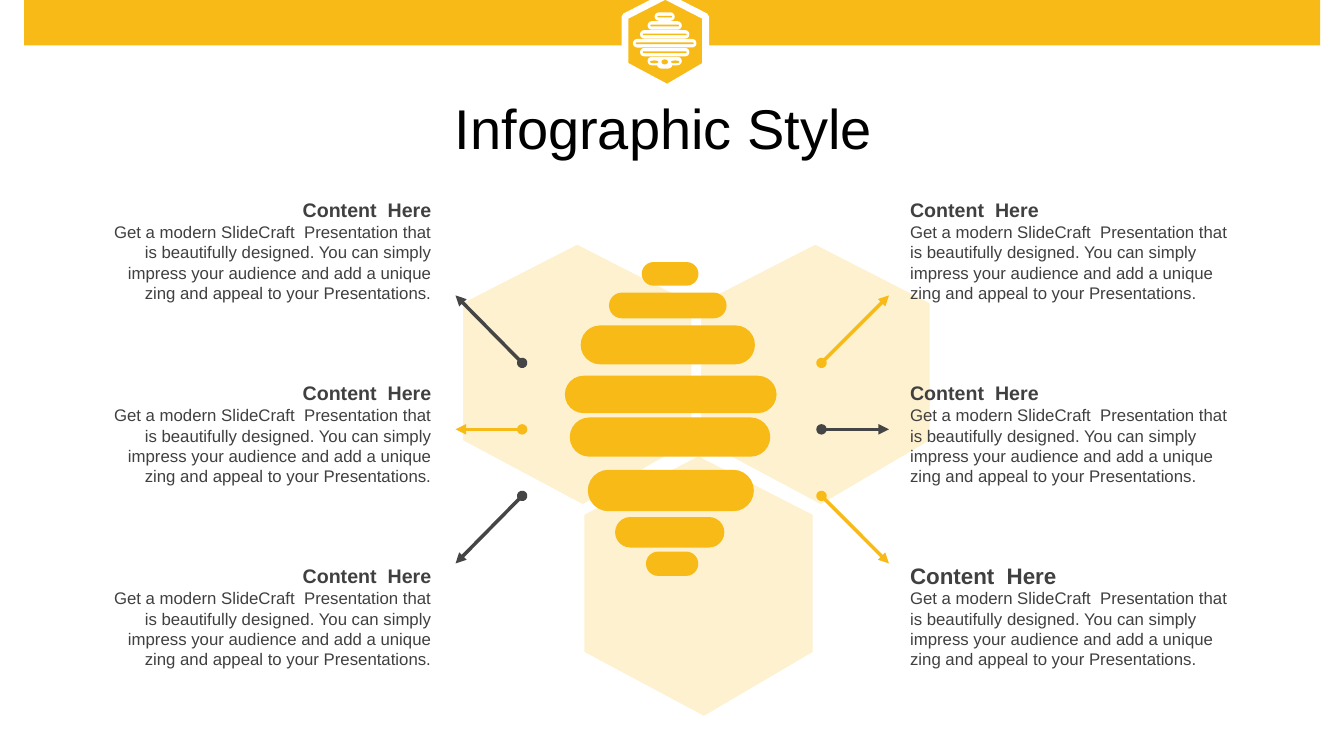
from lxml import etree
from pptx import Presentation
from pptx import util as u
from pptx.dml.color import RGBColor
from pptx.enum import shapes, text
from pptx.oxml.ns import qn

# Content
TITLE = "Infographic Style"
HEADING = "Content  Here"
BODY = ("Get a modern SlideCraft  Presentation that is beautifully designed. "
        "You can simply impress your audience and add a unique zing and "
        "appeal to your Presentations.")

# Heading sizes by row, arrow colours by row
COLUMNS = [
    dict(left=643, align="LEFT", arrow=(586.8, 635),
         sizes=(14, 14, 16), colors=("honey", "dark", "honey")),
    dict(left=71.3, align="RIGHT", arrow=(373, 325.4),
         sizes=(14, 14, 14), colors=("dark", "honey", "dark")),
]
ARROW_ENDS = [(259.2, 211), (306.7, 306.7), (354.2, 402.5)]

# Beehive bands: left, top, width, height
HIVE = [(458.4, 187.2, 40.5, 16.9), (435, 209, 84, 18.4),
        (414.8, 232.4, 124.5, 27.8), (403.5, 268.4, 151.2, 26.7),
        (407, 298.2, 143.2, 28), (419.9, 335.6, 118.6, 29.6),
        (439.4, 369.3, 78, 21.8), (461.4, 394, 37.4, 17.4)]

# Honeycomb cells: left, top
CELLS = [(498.4, 172), (328.3, 172), (414.9, 323.2)]
HEXAGON = [(84, 0), (168, 43), (168, 144), (88, 191), (0, 144), (0, 43)]

# Header emblem: band widths from top to bottom, feet holes
EMBLEM_WIDTHS = [14.4, 24.5, 35.3, 45.4, 35.3, 24.5]
EMBLEM_CENTER, EMBLEM_TOP, EMBLEM_STEP = 474.8, 8.8, 6.35
EMBLEM_HOLES = [(-7.5, 6, 2), (0, 4.6, 3.6), (7.5, 6, 2)]

THEME = dict(
    font="Arial", title=40, body=12,
    honey=RGBColor(0xF8, 0xBA, 0x16), dark=RGBColor(0x45, 0x45, 0x45),
    text=RGBColor(0x40, 0x40, 0x40), black=RGBColor(0, 0, 0),
    white=RGBColor(0xFF, 0xFF, 0xFF),
)

deck = Presentation()
deck.slide_width, deck.slide_height = u.Pt(960), u.Pt(540)
page = deck.slides.add_slide(deck.slide_layouts[6])


def paint(shape, color, outline=None):
    shape.shadow.inherit = False
    shape.fill.solid()
    shape.fill.fore_color.rgb = THEME[color]
    if outline:
        shape.line.color.rgb = THEME[outline]
        shape.line.width = u.Pt(4.88)
    else:
        shape.line.fill.background()
    return shape


def add_block(kind, left, top, width, height, color):
    shape = page.shapes.add_shape(
        kind, u.Pt(left), u.Pt(top), u.Pt(width), u.Pt(height))
    if kind == shapes.MSO_SHAPE.ROUNDED_RECTANGLE:
        shape.adjustments[0] = 0.5
    return paint(shape, color)


def add_hexagon(left, top, scale=1.0, opacity=100):
    builder = page.shapes.build_freeform(*HEXAGON[0], scale=u.Pt(1) * scale)
    builder.add_line_segments(HEXAGON[1:], close=True)
    shape = paint(builder.convert_to_shape(u.Pt(left), u.Pt(top)),
                  "honey", "white")
    if opacity < 100:
        tint = shape.fill._xPr.find(qn("a:solidFill"))[0]
        etree.SubElement(tint, qn("a:alpha"), val=str(opacity * 1000))


def add_text(words, left, top, width, height, size, color="text", bold=False,
             align="LEFT", anchor="TOP", grow=True, leading=None, before=None):
    box = page.shapes.add_textbox(
        u.Pt(left), u.Pt(top), u.Pt(width), u.Pt(height))
    frame = box.text_frame
    frame.word_wrap = True
    frame.vertical_anchor = getattr(text.MSO_ANCHOR, anchor)
    if grow:
        frame.auto_size = text.MSO_AUTO_SIZE.SHAPE_TO_FIT_TEXT
    para = frame.paragraphs[0]
    para.alignment = getattr(text.PP_ALIGN, align)
    if leading:
        para.line_spacing = leading
    if before:
        para.space_before = u.Pt(before)
    span = para.add_run()
    span.text = words
    span.font.name = THEME["font"]
    span.font.size = u.Pt(size)
    span.font.bold = bold
    span.font.color.rgb = THEME[color]


def add_arrow(start, end, color):
    arrow = page.shapes.add_connector(
        shapes.MSO_CONNECTOR.STRAIGHT, *map(u.Pt, start + end))
    arrow.line.color.rgb = THEME[color]
    arrow.line.width = u.Pt(2.5)
    line = arrow.line._get_or_add_ln()
    etree.SubElement(line, qn("a:headEnd"), type="oval")
    etree.SubElement(line, qn("a:tailEnd"), type="triangle")
    etree.SubElement(arrow._element.spPr, qn("a:effectLst"))


ROUND = shapes.MSO_SHAPE.ROUNDED_RECTANGLE
OVAL = shapes.MSO_SHAPE.OVAL

# Header band and emblem
add_block(shapes.MSO_SHAPE.RECTANGLE, 17.3, 0, 925.7, 32.4, "honey")
add_hexagon(446.4, -2.9, scale=0.343)
for row, width in enumerate(EMBLEM_WIDTHS):
    top = EMBLEM_TOP + row * EMBLEM_STEP
    add_block(ROUND, EMBLEM_CENTER - width / 2, top, width, 6.1, "white")
    if row < 5:
        slit = width - 4
        add_block(ROUND, EMBLEM_CENTER - slit / 2, top + 2.5, slit, 1.2, "honey")
add_block(ROUND, EMBLEM_CENTER - 5.5, 43, 11, 6, "white")
for shift, width, height in EMBLEM_HOLES:
    add_block(OVAL, EMBLEM_CENTER + shift - width / 2, 44.2 - height / 2,
              width, height, "honey")

# Honeycomb behind the hive
for left, top in CELLS:
    add_hexagon(left, top, opacity=20)

# Title
add_text(TITLE, 18, 65.5, 911.5, 56.9, THEME["title"], color="black",
         align="CENTER", anchor="MIDDLE", grow=False, leading=0.9, before=10)

# Arrows and text columns
for column in COLUMNS:
    start_x, end_x = column["arrow"]
    for row, (start_y, end_y) in enumerate(ARROW_ENDS):
        add_arrow((start_x, start_y), (end_x, end_y), column["colors"][row])
        top = 137.5 + row * 130.8
        size = column["sizes"][row]
        height = size * 1.2 + 7.4
        add_text(HEADING, column["left"], top + 12.2 - height / 2, 244, height,
                 size, bold=True, align=column["align"], anchor="MIDDLE")
        add_text(BODY, column["left"], top + 17.5, 244, 65.5, THEME["body"],
                 align=column["align"])

# Beehive
for band in HIVE:
    add_block(ROUND, *band, "honey")

deck.save("out.pptx")
